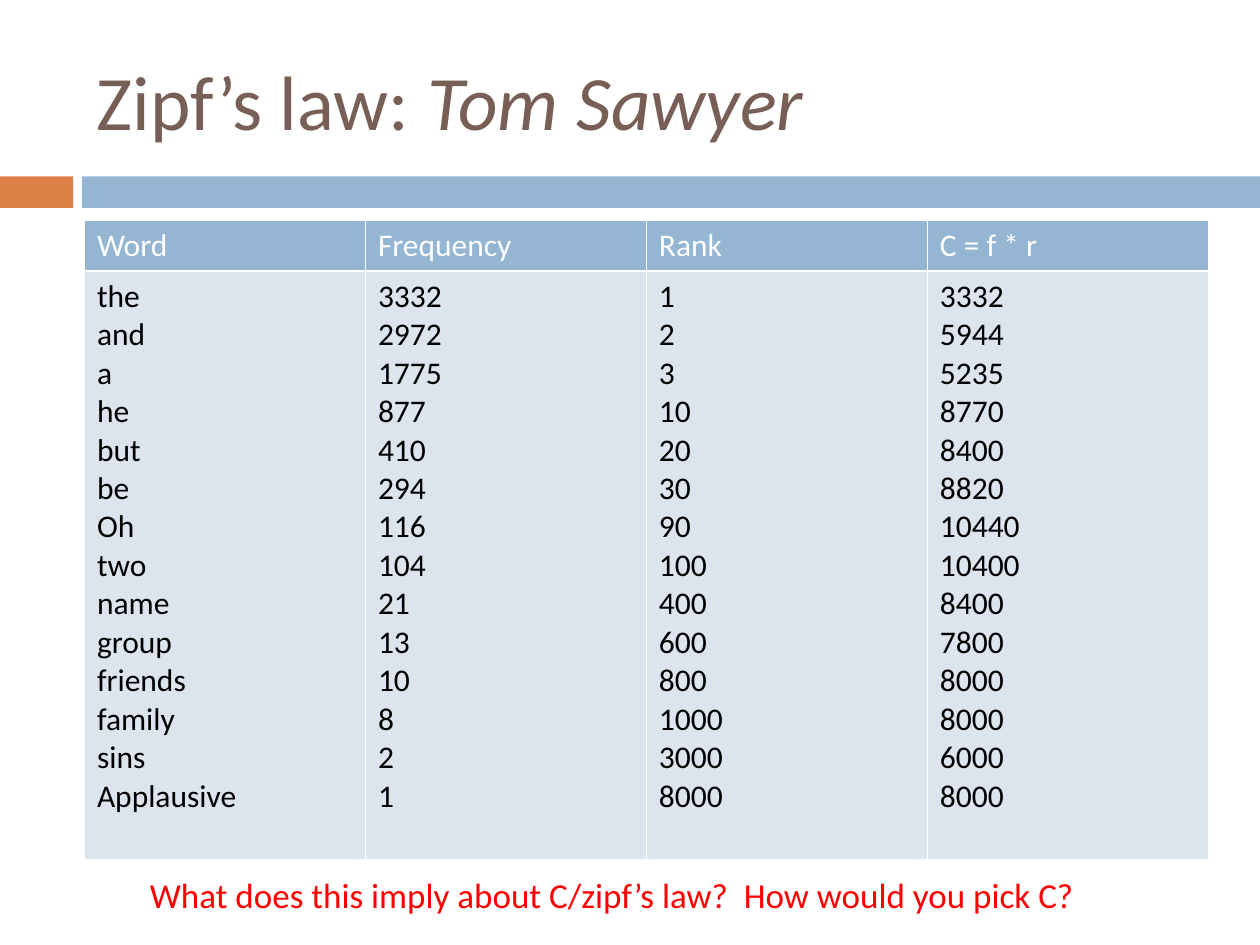
import pptx
import pptx.util
import pptx.dml.color
import pptx.enum.shapes
import pptx.enum.text
import pptx.oxml
import pptx.oxml.ns

Inches = pptx.util.Inches
Pt = pptx.util.Pt
RGB = pptx.dml.color.RGBColor

WHITE = RGB(0xFF, 0xFF, 0xFF)
BLACK = RGB(0, 0, 0)
RED = RGB(0xFF, 0, 0)
BROWN = RGB(0x77, 0x5F, 0x55)
ORANGE = RGB(0xDD, 0x80, 0x47)
BLUE = RGB(0x94, 0xB6, 0xD2)
PALE = RGB(0xDC, 0xE5, 0xEE)
FONT = "Calibri"

TITLE = ("Zipf’s law: ", "Tom Sawyer")
QUERY = "What does this imply about C/zipf’s law?  How would you pick C?"
HEADS = ("Word", "Frequency", "Rank", "C = f * r")
WORDS = [
    ("the", 3332, 1, 3332),
    ("and", 2972, 2, 5944),
    ("a", 1775, 3, 5235),
    ("he", 877, 10, 8770),
    ("but", 410, 20, 8400),
    ("be", 294, 30, 8820),
    ("Oh", 116, 90, 10440),
    ("two", 104, 100, 10400),
    ("name", 21, 400, 8400),
    ("group", 13, 600, 7800),
    ("friends", 10, 800, 8000),
    ("family", 8, 1000, 8000),
    ("sins", 2, 3000, 6000),
    ("Applausive", 1, 8000, 8000),
]
BARS = [(0, 0.58, ORANGE), (0.65, 9.35, BLUE)]
LEFT, WIDTH = 0.67, 8.92
HEIGHTS = (0.4, 4.67)


def style(frame, size, color):
    for para in frame.paragraphs:
        for run in para.runs:
            font = run.font
            font.name, font.size, font.bold = FONT, Pt(size), False
            font.color.rgb = color


def add_text(slide, box, parts, size, color):
    frame = slide.shapes.add_textbox(*map(Inches, box)).text_frame
    for part in parts:
        frame.paragraphs[0].add_run().text = part
    style(frame, size, color)
    return frame


def edge(cell):
    """Give the cell thin white borders on all four sides."""
    props = cell._tc.get_or_add_tcPr()
    for spot, side in enumerate(("lnL", "lnR", "lnT", "lnB")):
        props.insert(spot, pptx.oxml.parse_xml(
            f'<a:{side} {pptx.oxml.ns.nsdecls("a")} w="{Pt(1)}"><a:solidFill>'
            f'<a:srgbClr val="{WHITE}"/></a:solidFill></a:{side}>'))


def add_grid(slide):
    """Add the table: a row of heads, then one tall cell per column."""
    table = slide.shapes.add_table(
        2, len(HEADS), Inches(LEFT), Inches(1.75),
        Inches(WIDTH), Inches(sum(HEIGHTS))).table
    for row, height in zip(table.rows, HEIGHTS):
        row.height = Inches(height)
    for col, (head, items) in enumerate(zip(HEADS, zip(*WORDS))):
        table.columns[col].width = Inches(WIDTH / len(HEADS))
        body = "\n".join(map(str, items))
        looks = ((head, BLUE, WHITE), (body, PALE, BLACK))
        for row, (text, fill, color) in enumerate(looks):
            cell = table.cell(row, col)
            cell.text_frame.text = text
            style(cell.text_frame, 18, color)
            cell.fill.solid()
            cell.fill.fore_color.rgb = fill
            edge(cell)


def main():
    deck = pptx.Presentation()
    deck.slide_width, deck.slide_height = Inches(10), Inches(7.5)
    slide = deck.slides.add_slide(deck.slide_layouts[6])

    for left, width, color in BARS:
        bar = slide.shapes.add_shape(
            pptx.enum.shapes.MSO_SHAPE.RECTANGLE,
            Inches(left), Inches(1.4), Inches(width), Inches(0.25))
        bar.shadow.inherit = False
        bar.fill.solid()
        bar.fill.fore_color.rgb = color
        bar.line.fill.background()

    title = add_text(slide, (LEFT, 0.25, WIDTH, 1.08), TITLE, 44, BROWN)
    title.word_wrap = True
    title.vertical_anchor = pptx.enum.text.MSO_ANCHOR.MIDDLE
    title.paragraphs[0].runs[1].font.italic = True

    add_grid(slide)
    query = add_text(slide, (1.09, 6.88, 7.61, 0.44), [QUERY], 20, RED)
    query.word_wrap = False
    query.auto_size = pptx.enum.text.MSO_AUTO_SIZE.SHAPE_TO_FIT_TEXT
    deck.save("out.pptx")


if __name__ == "__main__":
    main()
